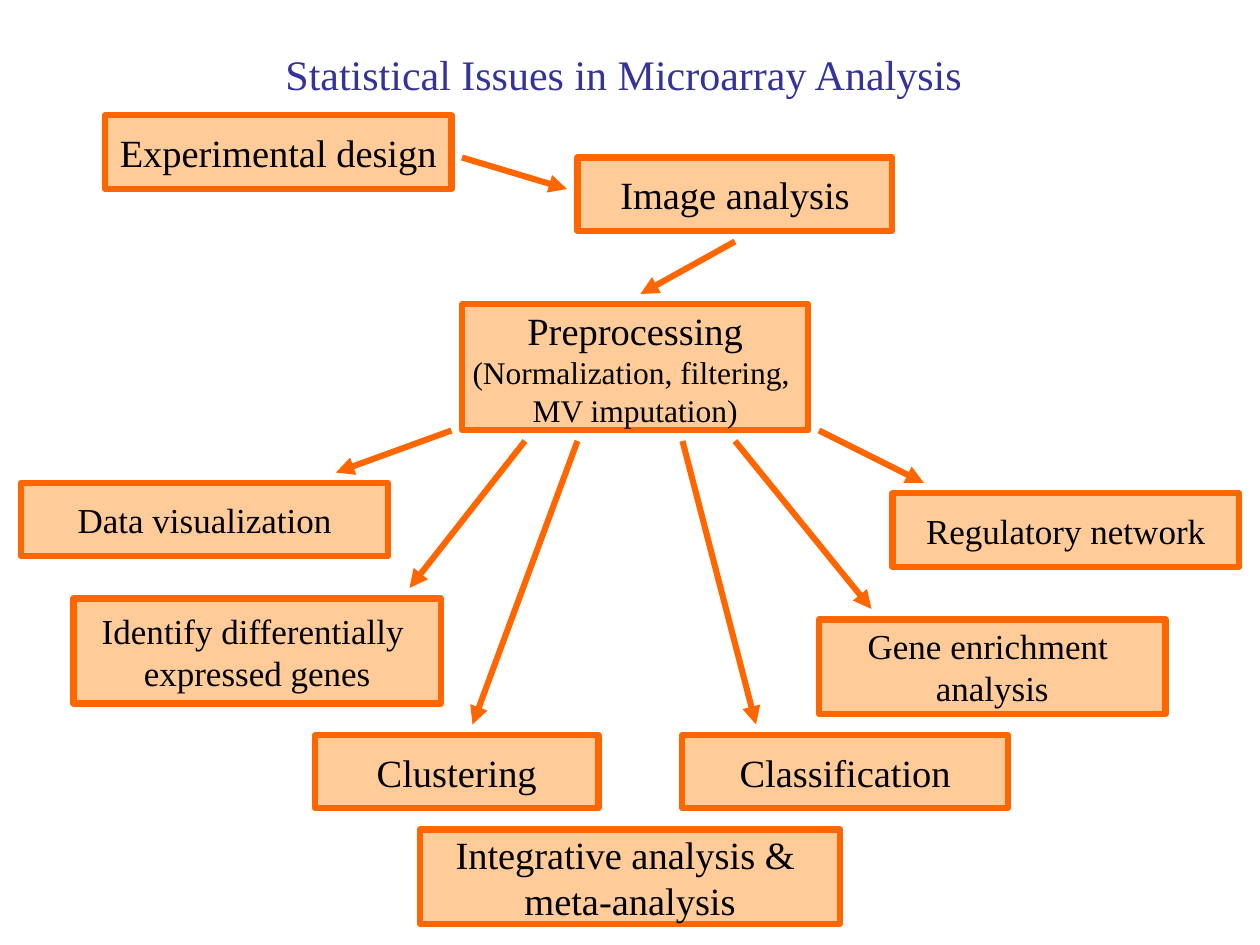
from dataclasses import dataclass

from lxml import etree
from pptx import Presentation
from pptx.dml.color import RGBColor
from pptx.enum.shapes import MSO_CONNECTOR, MSO_SHAPE
from pptx.enum.text import MSO_ANCHOR, MSO_AUTO_SIZE, PP_ALIGN
from pptx.oxml.ns import qn
from pptx.slide import Slide
from pptx.util import Inches, Length, Pt

RECTANGLE = MSO_SHAPE.RECTANGLE
STRAIGHT = MSO_CONNECTOR.STRAIGHT
MIDDLE = MSO_ANCHOR.MIDDLE
CENTER = PP_ALIGN.CENTER
NO_AUTOSIZE = MSO_AUTO_SIZE.NONE

COLORS = {"fill": "FFCC99", "line": "FF6600", "text": "000000", "title": "333399"}
FONT = "Times New Roman"
LINE_WIDTH = 3.5
CELLS_PER_INCH = 12
TITLE_ONLY = 5


@dataclass(frozen=True)
class TextLine:
    text: str
    size: int
    color: str = "text"


@dataclass(frozen=True)
class Step:
    column: int
    row: int
    columns: int
    rows: int
    lines: tuple[TextLine, ...]


@dataclass(frozen=True)
class Arrow:
    start: tuple[int, int]
    end: tuple[int, int]


STEPS = (
    Step(10, 11, 33, 7, (TextLine("Experimental design", 22),)),
    Step(55, 15, 30, 7, (TextLine("Image analysis", 22),)),
    Step(44, 29, 33, 12, (
        TextLine("Preprocessing", 22),
        TextLine("(Normalization, filtering, ", 18),
        TextLine("MV imputation)", 18),
    )),
    Step(2, 46, 35, 7, (TextLine("Data visualization", 20),)),
    Step(7, 57, 35, 10, (
        TextLine("Identify differentially ", 20),
        TextLine("expressed genes", 20),
    )),
    Step(85, 47, 33, 7, (TextLine("Regulatory network", 20),)),
    Step(30, 70, 27, 7, (TextLine("Clustering", 22),)),
    Step(65, 70, 31, 7, (TextLine("Classification", 22),)),
    Step(78, 59, 33, 9, (
        TextLine("Gene enrichment ", 20),
        TextLine("analysis", 20),
    )),
    Step(40, 79, 40, 9, (
        TextLine("Integrative analysis & ", 22),
        TextLine("meta-analysis", 22),
    )),
)

ARROWS = (
    Arrow((44, 15), (54, 18)),
    Arrow((70, 23), (61, 28)),
    Arrow((43, 41), (32, 45)),
    Arrow((50, 42), (39, 56)),
    Arrow((78, 41), (88, 46)),
    Arrow((55, 42), (45, 69)),
    Arrow((65, 42), (72, 69)),
    Arrow((70, 42), (83, 58)),
)


def cells(count: float) -> Length:
    return Inches(count / CELLS_PER_INCH)


def color(name: str) -> RGBColor:
    return RGBColor.from_string(COLORS[name])


def write_lines(shape, lines: tuple[TextLine, ...]) -> None:
    frame = shape.text_frame
    frame.auto_size = NO_AUTOSIZE
    frame.word_wrap = False
    frame.vertical_anchor = MIDDLE
    for index, line in enumerate(lines):
        para = frame.add_paragraph() if index else frame.paragraphs[0]
        para.alignment = CENTER
        span = para.add_run()
        span.text = line.text
        span.font.name = FONT
        span.font.size = Pt(line.size)
        span.font.color.rgb = color(line.color)


def style_line(shape) -> None:
    shape.line.color.rgb = color("line")
    shape.line.width = Pt(LINE_WIDTH)


def format_title(page: Slide) -> None:
    title = page.shapes.title
    title.left, title.top = Inches(2.14), Inches(0.33)
    title.width, title.height = Inches(5.62), Inches(0.51)
    write_lines(title, (TextLine("Statistical Issues in Microarray Analysis", 24, "title"),))


def draw_step(page: Slide, step: Step) -> None:
    place = map(cells, (step.column, step.row, step.columns, step.rows))
    box = page.shapes.add_shape(RECTANGLE, *place)
    box.shadow.inherit = False
    box.fill.solid()
    box.fill.fore_color.rgb = color("fill")
    style_line(box)
    write_lines(box, step.lines)


def draw_arrow(page: Slide, arrow: Arrow) -> None:
    ends = map(cells, (*arrow.start, *arrow.end))
    connector = page.shapes.add_connector(STRAIGHT, *ends)
    style_line(connector)
    etree.SubElement(connector.line._get_or_add_ln(), qn("a:tailEnd"), type="triangle")
    etree.SubElement(connector._element.spPr, qn("a:effectLst"))


def main() -> None:
    deck = Presentation()
    deck.slide_width, deck.slide_height = Inches(10), Inches(7.5)
    page = deck.slides.add_slide(deck.slide_layouts[TITLE_ONLY])
    format_title(page)
    for step in STEPS:
        draw_step(page, step)
    for arrow in ARROWS:
        draw_arrow(page, arrow)
    deck.save("out.pptx")


if __name__ == "__main__":
    main()
